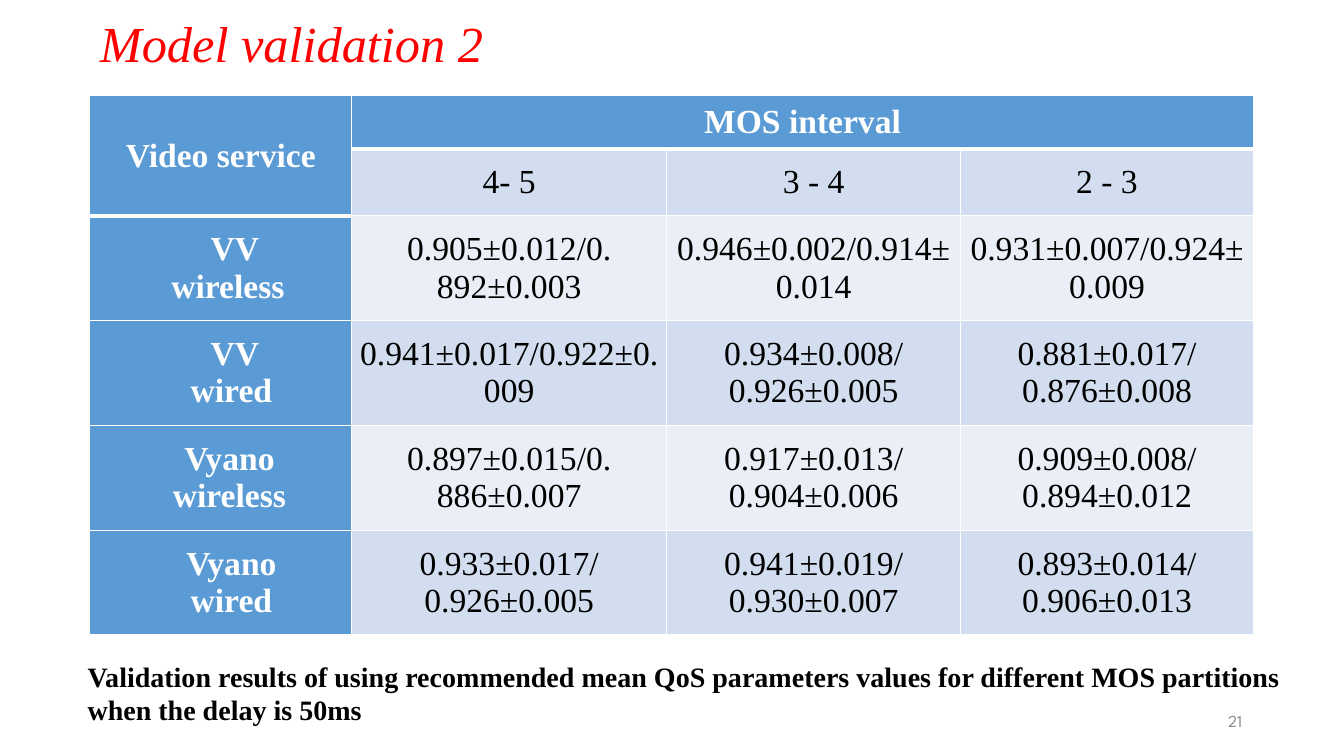
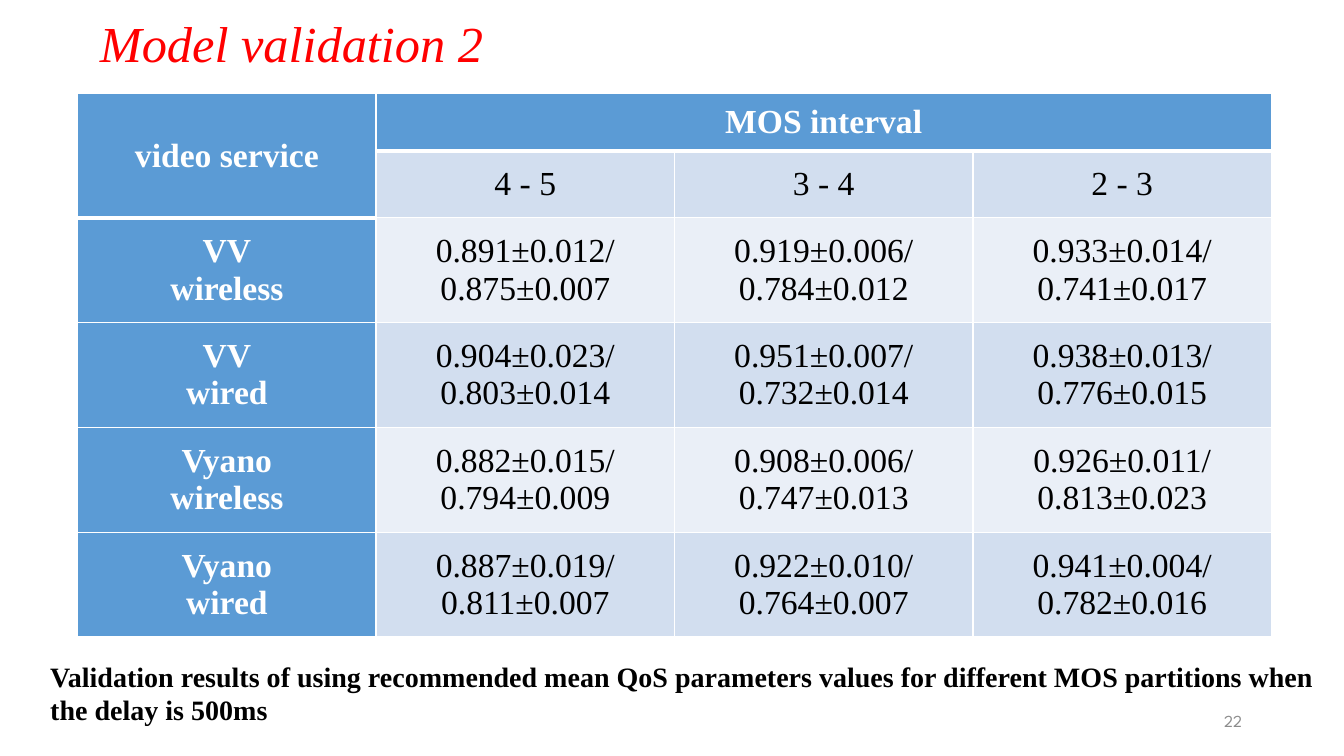
import pptx
import pptx.dml.color
import pptx.enum.text
import pptx.oxml
import pptx.oxml.ns
import pptx.util
from pptx.util import Inches

SERIF = "Times New Roman"
WHITE, BLACK, TITLE_RED, NUMBER_GREY = "FFFFFF", "000000", "FF0000", "8C8C8C"
HEADER_BLUE, ODD_ROW, EVEN_ROW = "5B9BD5", "D2DEEF", "EAEFF7"
TITLE = "Model validation 2"
CAPTION = ("Validation results of using recommended mean QoS parameters values "
           "for different MOS partitions when the delay is {}")
SERVICES = ["VV\nwireless", "VV\nwired", "Vyano\nwireless", "Vyano\nwired"]
BODY_ROW = 1.04

SLIDES = [
    {
        "number": "21", "delay": "50ms",
        "caption_box": (0.77, 6.49, 12.56, 0.77),
        "table_corner": (0.89, 0.95),
        "columns": [2.6, 3.12, 2.92, 2.9],
        "header_rows": [0.53, 0.66],
        "service_heading": "Video service",
        "intervals": ["4- 5", "3 - 4", "2 - 3"],
        "label_indents": [(0.28, 0.14), (0.28, 0.21), (0.17, 0.17), (0.21, 0.21)],
        "results": [
            ["0.905±0.012/0.\n892±0.003", "0.946±0.002/0.914±0.014", "0.931±0.007/0.924±0.009"],
            ["0.941±0.017/0.922±0.009", "0.934±0.008/\n0.926±0.005", "0.881±0.017/\n0.876±0.008"],
            ["0.897±0.015/0.\n886±0.007", "0.917±0.013/\n0.904±0.006", "0.909±0.008/\n0.894±0.012"],
            ["0.933±0.017/\n0.926±0.005", "0.941±0.019/\n0.930±0.007", "0.893±0.014/\n0.906±0.013"],
        ],
    },
    {
        "number": "22", "delay": "500ms",
        "caption_box": (0.4, 6.49, 12.94, 0.77),
        "table_corner": (0.77, 0.93),
        "columns": [2.96] * 4,
        "header_rows": [0.57, 0.66],
        "service_heading": "video service",
        "intervals": ["4 - 5", "3 - 4", "2 - 3"],
        "label_indents": [(0, 0)] * 4,
        "results": [
            ["0.891±0.012/\n0.875±0.007", "0.919±0.006/\n0.784±0.012", "0.933±0.014/\n0.741±0.017"],
            ["0.904±0.023/\n0.803±0.014", "0.951±0.007/\n0.732±0.014", "0.938±0.013/\n0.776±0.015"],
            ["0.882±0.015/\n0.794±0.009", "0.908±0.006/\n0.747±0.013", "0.926±0.011/\n0.813±0.023"],
            ["0.887±0.019/\n0.811±0.007", "0.922±0.010/\n0.764±0.007", "0.941±0.004/\n0.782±0.016"],
        ],
    },
]


def rgb(value):
    """Turn a hex string into a colour."""
    return pptx.dml.color.RGBColor.from_string(value)


def write(frame, text, size, color, font=SERIF, bold=False, italic=False, align="LEFT", anchor="TOP"):
    """Fill a text frame with evenly styled paragraphs."""
    frame.text = text
    frame.word_wrap = True
    frame.vertical_anchor = pptx.enum.text.MSO_ANCHOR[anchor]
    for paragraph in frame.paragraphs:
        paragraph.alignment = pptx.enum.text.PP_ALIGN[align]
        paragraph.font.name = font
        paragraph.font.size = pptx.util.Pt(size)
        paragraph.font.bold = bold
        paragraph.font.italic = italic
        paragraph.font.color.rgb = rgb(color)


def add_text(slide, box, text, size, color, **style):
    """Add a wrapping text box."""
    frame = slide.shapes.add_textbox(*map(Inches, box)).text_frame
    write(frame, text, size, color, **style)


def add_title(slide):
    """Place and style the title placeholder."""
    title = slide.shapes.title
    title.left, title.top, title.width, title.height = map(Inches, (0.89, 0.07, 4.46, 0.71))
    write(title.text_frame, TITLE, 36, TITLE_RED, italic=True)


def set_borders(cell, points):
    """Draw the white sides of a cell, with widths given by side."""
    properties = cell._tc.get_or_add_tcPr()
    for side, width in points.items():
        properties.append(pptx.oxml.parse_xml(
            f'<a:ln{side} {pptx.oxml.ns.nsdecls("a")} w="{pptx.util.Pt(width)}">'
            f'<a:solidFill><a:srgbClr val="{WHITE}"/></a:solidFill></a:ln{side}>'))


def style_cell(cell, text, row, column):
    """Write, colour and border one cell by its place in the table."""
    heading = row == 0 or column == 0
    cell.margin_left = cell.margin_right = Inches(0.07)
    cell.margin_top = cell.margin_bottom = 0
    write(cell.text_frame, text, 24, WHITE if heading else BLACK, bold=heading, align="CENTER")
    cell.vertical_anchor = pptx.enum.text.MSO_ANCHOR.MIDDLE
    last_header_row = 1 if column == 0 else 0
    set_borders(cell, {"L": 1, "R": 1,
                       "T": 3 if row == last_header_row + 1 else 1,
                       "B": 3 if row == last_header_row else 1})
    cell.fill.solid()
    cell.fill.fore_color.rgb = rgb(HEADER_BLUE if heading else ODD_ROW if row % 2 else EVEN_ROW)


def add_results(slide, content):
    """Add the table of results by service and MOS interval."""
    rows = [[content["service_heading"], "MOS interval", "", ""], ["", *content["intervals"]]]
    rows += [[service, *values] for service, values in zip(SERVICES, content["results"])]
    widths = content["columns"]
    heights = content["header_rows"] + [BODY_ROW] * len(SERVICES)
    box = (*content["table_corner"], sum(widths), sum(heights))
    table = slide.shapes.add_table(len(rows), len(widths), *map(Inches, box)).table
    table.horz_banding = False
    for column, width in zip(table.columns, widths):
        column.width = Inches(width)
    for row, height in zip(table.rows, heights):
        row.height = Inches(height)
    for r, values in enumerate(rows):
        for c, text in enumerate(values):
            style_cell(table.cell(r, c), text, r, c)
    table.cell(0, 0).merge(table.cell(1, 0))
    table.cell(0, 1).merge(table.cell(0, 3))
    for r, indents in enumerate(content["label_indents"], start=2):
        for paragraph, indent in zip(table.cell(r, 0).text_frame.paragraphs, indents):
            paragraph._p.get_or_add_pPr().set("marL", str(Inches(indent)))


def main():
    """Build and save the slides."""
    deck = pptx.Presentation()
    deck.slide_width, deck.slide_height = Inches(13.33), Inches(7.5)
    for content in SLIDES:
        slide = deck.slides.add_slide(deck.slide_layouts[5])
        add_title(slide)
        add_text(slide, (9.42, 6.95, 3, 0.4), content["number"], 12, NUMBER_GREY,
                 font="League Spartan", align="RIGHT", anchor="MIDDLE")
        add_results(slide, content)
        add_text(slide, content["caption_box"], CAPTION.format(content["delay"]), 20, BLACK, bold=True)
    deck.save("out.pptx")


if __name__ == "__main__":
    main()
